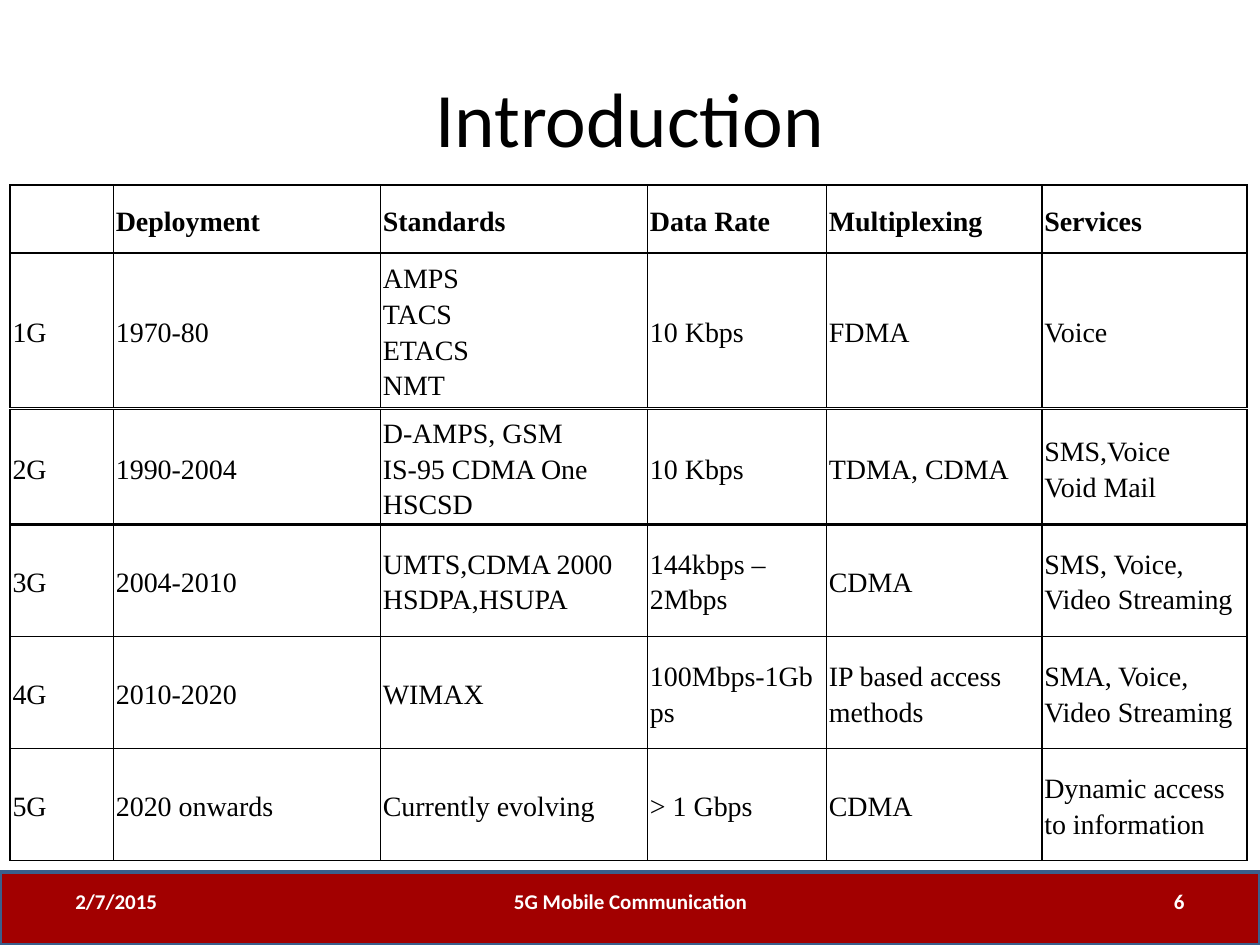
from lxml import etree
from pptx import Presentation
from pptx.dml.color import RGBColor
from pptx.enum import shapes, text
from pptx.oxml.ns import qn
from pptx.util import Inches, Pt

COLUMN_WIDTHS = [0.82, 2.12, 2.12, 1.42, 1.71, 1.63]
HEADINGS = ["", "Deployment", "Standards", "Data Rate", "Multiplexing", "Services"]
FIRST = ["1G", "1970-80", "AMPS\nTACS\nETACS\nNMT", "10 Kbps", "FDMA", "Voice"]
SECOND = ["2G", "1990-2004", "D-AMPS, GSM\nIS-95 CDMA One\nHSCSD", "10 Kbps",
          "TDMA, CDMA", "SMS,Voice\nVoid Mail"]
THIRD = ["3G", "2004-2010", "UMTS,CDMA 2000\nHSDPA,HSUPA", "144kbps – 2Mbps",
         "CDMA", "SMS, Voice,\nVideo Streaming"]
FOURTH = ["4G", "2010-2020", "WIMAX", "100Mbps-1Gbps",
          "IP based access methods", "SMA, Voice, Video Streaming"]
FIFTH = ["5G", "2020 onwards", "Currently evolving", "> 1 Gbps",
         "CDMA", "Dynamic access to information"]
TABLES = [
    (1.47, [0.54, 1.21], [HEADINGS, FIRST]),
    (3.25, [0.91], [SECOND]),
    (4.16, [0.89], [THIRD]),
    (5.05, [0.89], [FOURTH]),
    (5.94, [0.89], [FIFTH]),
]


def color(value):
    """Return the colour for a hex string."""
    return RGBColor.from_string(value)


def style_font(font, name, size, value, bold=False):
    """Set face, size, colour and weight of a font."""
    font.name = name
    font.size = Pt(size)
    font.bold = bold
    font.color.rgb = color(value)


def add_text(page, words, left, top, width, height, size, value, align, bold=False):
    """Add one line of vertically centred text."""
    box = page.shapes.add_textbox(Inches(left), Inches(top), Inches(width), Inches(height))
    frame = box.text_frame
    frame.word_wrap = True
    frame.vertical_anchor = text.MSO_ANCHOR.MIDDLE
    para = frame.paragraphs[0]
    para.text = words
    para.alignment = align
    style_font(para.font, "Calibri", size, value, bold)


def add_footer_band(page):
    """Add the red band at the foot of the page."""
    band = page.shapes.add_shape(shapes.MSO_SHAPE.RECTANGLE, 0, Inches(6.92),
                                 Inches(10), Inches(0.58))
    band.shadow.inherit = False
    band.fill.solid()
    band.fill.fore_color.rgb = color("A20000")
    band.line.color.rgb = color("3A5F8C")
    band.line.width = Pt(2)


def add_borders(cell, value):
    """Draw a thin line on all four sides of a cell."""
    properties = cell._tc.get_or_add_tcPr()
    for side in ("a:lnL", "a:lnR", "a:lnT", "a:lnB"):
        line = etree.SubElement(properties, qn(side), w=str(Pt(1)))
        fill = etree.SubElement(line, qn("a:solidFill"))
        etree.SubElement(fill, qn("a:srgbClr"), val=value)


def fill_cell(cell, words, bold):
    """Write a cell and set its borders, margins and font."""
    add_borders(cell, "000000")
    cell.fill.background()
    cell.vertical_anchor = text.MSO_ANCHOR.MIDDLE
    cell.margin_left = cell.margin_right = Inches(0.02)
    cell.margin_top = cell.margin_bottom = 0
    cell.text = words
    for para in cell.text_frame.paragraphs:
        para.line_spacing = 1.15
        style_font(para.font, "Times New Roman", 16, "000000", bold)


def add_generation_table(page, top, heights, rows):
    """Add a table of mobile generations on the shared columns."""
    frame = page.shapes.add_table(len(rows), len(COLUMN_WIDTHS), Inches(0.08), Inches(top),
                                  Inches(sum(COLUMN_WIDTHS)), Inches(sum(heights)))
    table = frame.table
    table.first_row = table.horz_banding = False
    for column, width in zip(table.columns, COLUMN_WIDTHS):
        column.width = Inches(width)
    for row, height, entries in zip(table.rows, heights, rows):
        row.height = Inches(height)
        for cell, words in zip(row.cells, entries):
            fill_cell(cell, words, entries is HEADINGS)


def main():
    """Build the slide and save it."""
    deck = Presentation()
    deck.slide_width, deck.slide_height = Inches(10), Inches(7.5)
    page = deck.slides.add_slide(deck.slide_layouts[6])
    align = text.PP_ALIGN
    add_footer_band(page)
    add_text(page, "Introduction", 0.5, 0.3, 9, 1.25, 44, "000000", align.CENTER)
    for words, left, width, side in [
        ("2/7/2015", 0.5, 2.33, align.LEFT),
        ("5G Mobile Communication", 3.42, 3.17, align.CENTER),
        ("6", 7.17, 2.33, align.RIGHT),
    ]:
        add_text(page, words, left, 6.95, width, 0.4, 12, "FFFFFF", side, True)
    for top, heights, rows in TABLES:
        add_generation_table(page, top, heights, rows)
    deck.save("out.pptx")


if __name__ == "__main__":
    main()
